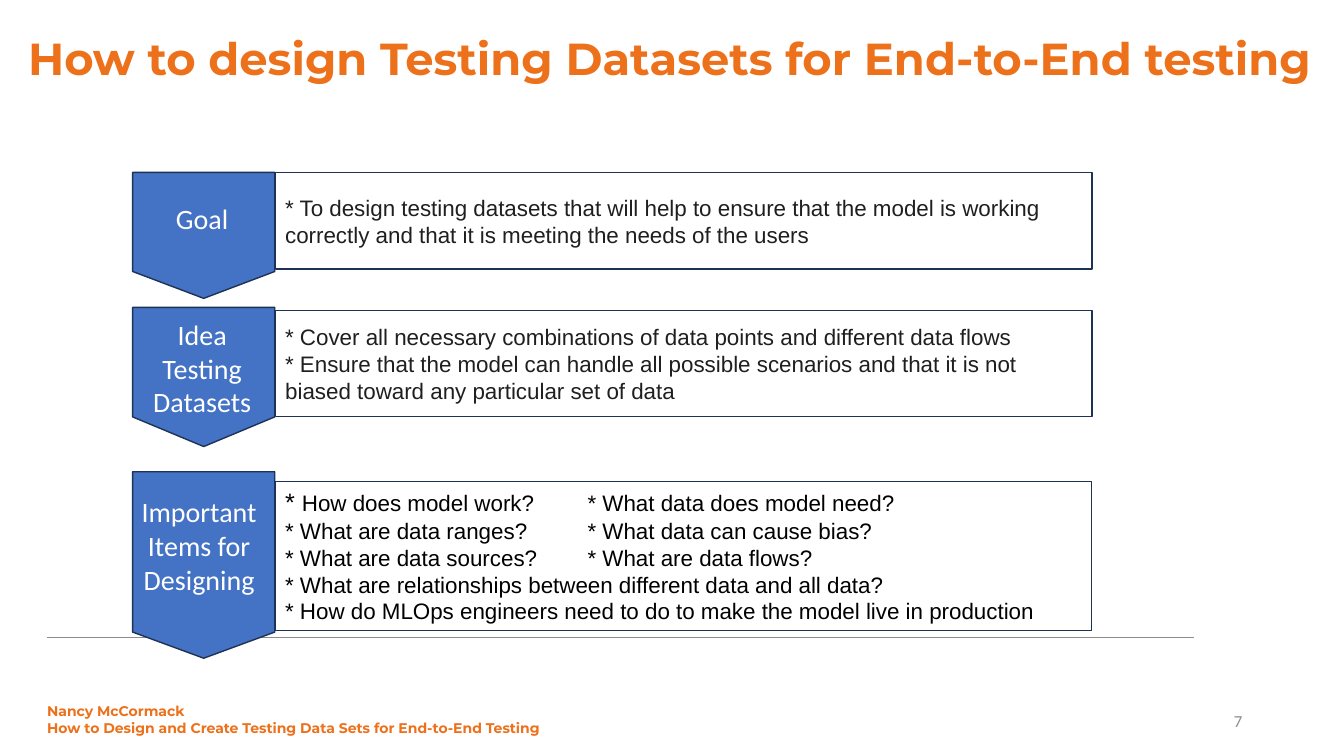
"""Build the slide on designing testing datasets for end-to-end testing."""
import dataclasses

import pptx
import pptx.dml.color
import pptx.enum.shapes
import pptx.enum.text
import pptx.oxml
import pptx.oxml.ns
import pptx.util
from lxml import etree

Inches = pptx.util.Inches
Pt = pptx.util.Pt
Color = pptx.dml.color.RGBColor.from_string
Align = pptx.enum.text.PP_ALIGN
Anchor = pptx.enum.text.MSO_ANCHOR
Kind = pptx.enum.shapes.MSO_SHAPE
qn = pptx.oxml.ns.qn


@dataclasses.dataclass(frozen=True)
class Theme:
    """Hold the colours, fonts and type sizes."""
    orange: str = "ED701A"
    blue: str = "4472C4"
    navy: str = "1E3256"
    white: str = "FFFFFF"
    black: str = "000000"
    ink: str = "1F1F1F"
    gray: str = "8C8C8C"
    head: str = "Montserrat"
    label: str = "Calibri"
    body: str = "Arial"
    title: int = 32
    step: int = 20
    lead: int = 18
    text: int = 16
    page: int = 12
    foot: int = 10


THEME = Theme()

STEPS = [
    (1.71, 1.25, 0.213, ["Goal"], (1.58, 1.95, 0.85, 0.44)),
    (3.05, 1.38, 0.213, ["Idea Testing Datasets"], (1.3, 3.1, 1.41, 1.11)),
    (4.68, 1.85, 0.184, ["Important Items for Designing"], (1.27, 4.86, 1.41, 1.11)),
]
GOAL = [
    "* To design testing datasets that will help to ensure that the model is "
    "working correctly and that it is meeting the needs of the users",
]
IDEAS = [
    "* Cover all necessary combinations of data points and different data flows",
    "* Ensure that the model can handle all possible scenarios and that it is "
    "not biased toward any particular set of data",
]
ITEMS = [
    "* How does model work?\t* What data does model need?",
    "* What are data ranges?\t* What data can cause bias?",
    "* What are data sources?\t* What are data flows?",
    "* What are relationships between different data and all data?",
    "* How do MLOps engineers need to do to make the model live in production",
]
FOOT = [
    "Nancy McCormack",
    "How to Design and Create Testing Data Sets for End-to-End Testing",
]


def write(shape, lines, font, size, color, bold=False, align=Align.LEFT, anchor=Anchor.TOP):
    """Fill a shape with one styled paragraph per line."""
    frame = shape.text_frame
    frame.word_wrap = True
    frame.vertical_anchor = anchor
    for i, line in enumerate(lines):
        para = frame.add_paragraph() if i else frame.paragraphs[0]
        para.add_run().text = line
        para.alignment = align
        para.font.name = font
        para.font.size = Pt(size)
        para.font.bold = bold
        para.font.color.rgb = Color(color)
    return frame


def label(slide, box, lines, *style, **more):
    """Add a text box."""
    shape = slide.shapes.add_textbox(*map(Inches, box))
    return write(shape, lines, *style, **more)


def block(slide, kind, box, fill=None, width=1):
    """Add a navy-edged shape, filled or hollow."""
    shape = slide.shapes.add_shape(kind, *map(Inches, box))
    shape.shadow.inherit = False
    if fill:
        shape.fill.solid()
        shape.fill.fore_color.rgb = Color(fill)
    else:
        shape.fill.background()
    shape.line.color.rgb = Color(THEME.navy)
    shape.line.width = Pt(width)
    return shape


def arrow(slide, top, high, point):
    """Add a pentagon that points down."""
    mid, wide = 2.02, 1.41
    box = (mid - high / 2, top + (high - wide) / 2, high, wide)
    shape = block(slide, Kind.PENTAGON, box, THEME.blue)
    shape.adjustments[0] = point
    shape.rotation = 90


def panel(slide, top, high, lines, color=THEME.ink, width=1, anchor=Anchor.MIDDLE):
    """Add a framed box of body text."""
    shape = block(slide, Kind.RECTANGLE, (2.73, top, 8.1, high), width=width)
    return write(shape, lines, THEME.body, THEME.text, color, anchor=anchor)


def split(frame):
    """Set the tab stop of the two-column lines and enlarge the first star."""
    for para in frame.paragraphs:
        if "\t" in para.text:
            stops = etree.Element(qn("a:tabLst"))
            etree.SubElement(stops, qn("a:tab"), pos=str(Inches(3)), algn="l")
            para._p.get_or_add_pPr().insert(0, stops)
    first = frame.paragraphs[0]
    star = first.runs[0]
    rest = first.add_run()
    rest.text = star.text[2:]
    star.text = star.text[:2]
    star.font.size = Pt(THEME.lead)


def rule(slide):
    """Add the thin line above the footer."""
    ends = map(Inches, (0.47, 6.32, 11.84, 6.32))
    line = slide.shapes.add_connector(pptx.enum.shapes.MSO_CONNECTOR.STRAIGHT, *ends)
    line.line.color.rgb = Color(THEME.gray)
    line.line.width = Pt(0.5)
    etree.SubElement(line._element.spPr, qn("a:effectLst"))


def main():
    """Build and save the slide."""
    deck = pptx.Presentation()
    deck.slide_width, deck.slide_height = Inches(13.33), Inches(7.5)
    slide = deck.slides.add_slide(deck.slide_layouts[6])
    title = label(slide, (0.18, 0.37, 12.98, 0.96),
                  ["How to design Testing Datasets for End-to-End testing"],
                  THEME.head, THEME.title, THEME.orange, bold=True)
    title.margin_top = title.margin_right = 0
    title.paragraphs[0].line_spacing = 0.9
    rule(slide)
    panel(slide, 1.71, 0.96, GOAL)
    panel(slide, 3.08, 1.05, IDEAS)
    split(panel(slide, 4.78, 1.48, ITEMS, THEME.black, 0.75, Anchor.TOP))
    for top, high, point, lines, box in STEPS:
        arrow(slide, top, high, point)
        label(slide, box, lines, THEME.label, THEME.step, THEME.white, align=Align.CENTER)
    label(slide, (9.42, 6.95, 3, 0.4), ["7"], THEME.label, THEME.page, THEME.gray,
          align=Align.RIGHT, anchor=Anchor.MIDDLE)
    label(slide, (0.37, 6.92, 5.24, 0.44), FOOT, THEME.head, THEME.foot,
          THEME.orange, bold=True)
    deck.save("out.pptx")


if __name__ == "__main__":
    main()
